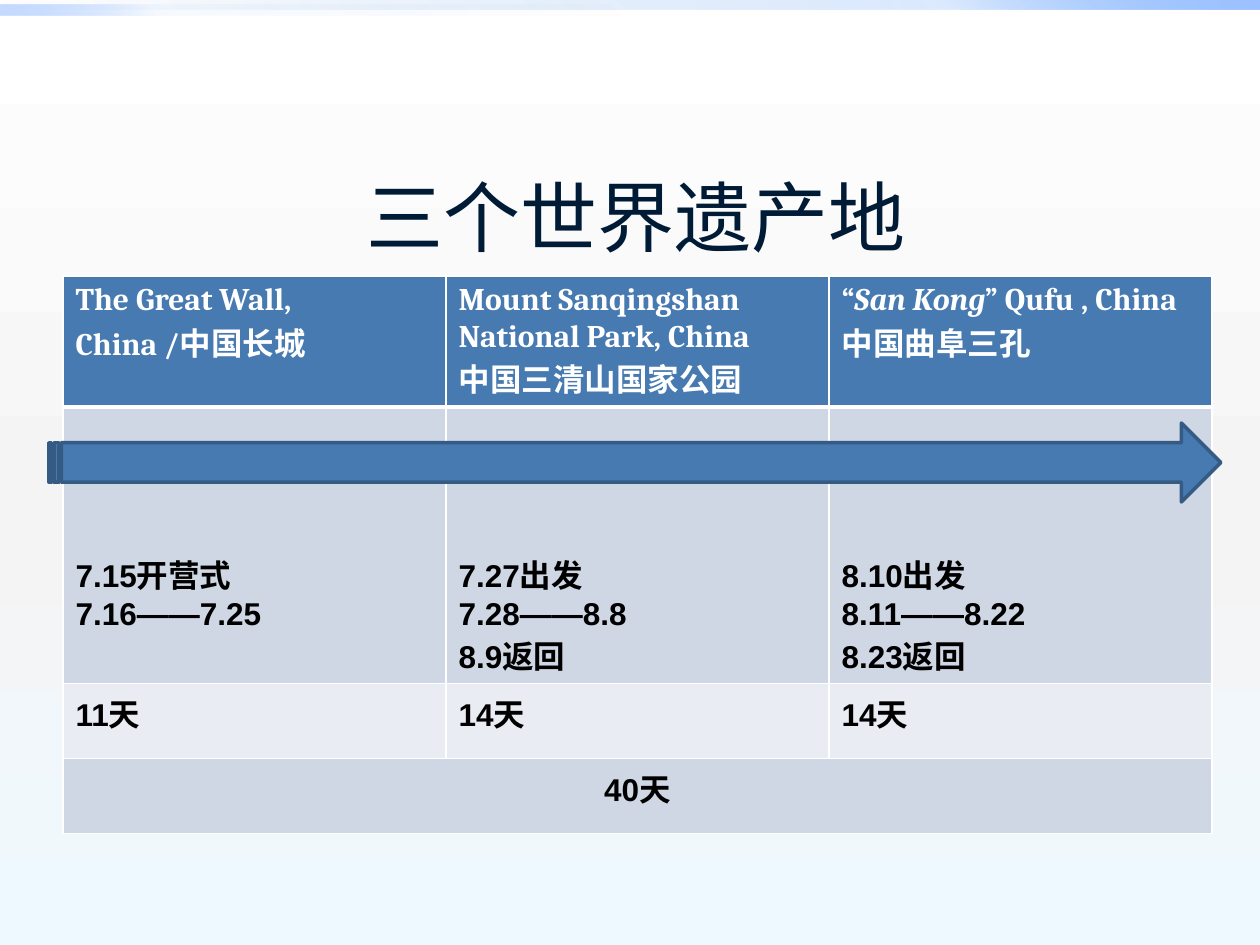
from lxml import etree
from pptx import Presentation
from pptx.dml.color import RGBColor
from pptx.enum.shapes import MSO_SHAPE
from pptx.enum.text import MSO_ANCHOR, PP_ALIGN
from pptx.oxml import parse_xml
from pptx.oxml.ns import nsdecls, qn
from pptx.util import Emu, Pt

RECT, ARROW = MSO_SHAPE.RECTANGLE, MSO_SHAPE.STRIPED_RIGHT_ARROW
CENTER, MIDDLE = PP_ALIGN.CENTER, MSO_ANCHOR.MIDDLE
PX = 914400 // 126

COLORS = {
    "blue": "477AB1", "outline": "355A83", "navy": "001B36",
    "white": "FFFFFF", "black": "000000",
    "odd_row": "CFD7E4", "even_row": "E9ECF2",
    "mist": "F4F4F4", "ice": "EEF9FF",
    "deep": "0058B7", "bright": "4F95FF", "sky": "9EC2FF",
}

# Each cell is a list of paragraphs, each paragraph a list of (text, italic).
HEADERS = [
    [[("The Great Wall,\vChina /中国长城", False)]],
    [[("Mount Sanqingshan National Park, China", False)],
     [("中国三清山国家公园", False)]],
    [[("“", False), ("San Kong", True), ("” Qufu , China", False)],
     [("中国曲阜三孔", False)]],
]
DATES = [
    ["7.15开营式", "7.16——7.25"],
    ["7.27出发", "7.28——8.8", "8.9返回"],
    ["8.10出发", "8.11——8.22", "8.23返回"],
]
DAYS = ["11天", "14天", "14天"]
TOTAL = "40天"
COL_WIDTH, ROW_HEIGHTS = 383, [131, 276, 75, 75]
ARROW_SPACE = 144


def px(n):
    return Emu(n * PX)


def rgb(name):
    return RGBColor.from_string(COLORS[name])


def set_gradient(fill, parent, stops, angle):
    """Fill with (position %, colour, opacity %) stops at a clockwise angle."""
    fill.solid()
    fill.fore_color.rgb = rgb("white")
    gs = "".join(
        f'<a:gs pos="{pos * 1000}"><a:srgbClr val="{COLORS[color]}">'
        f'<a:alpha val="{alpha * 1000}"/></a:srgbClr></a:gs>'
        for pos, color, alpha in stops)
    solid = next(parent.iter(qn("a:solidFill")))
    solid.getparent().replace(solid, parse_xml(
        f'<a:gradFill {nsdecls("a")} rotWithShape="1"><a:gsLst>{gs}</a:gsLst>'
        f'<a:lin ang="{angle * 60000}" scaled="0"/></a:gradFill>'))


def add_plain_shape(slide, kind, x, y, w, h):
    sp = slide.shapes.add_shape(kind, px(x), px(y), px(w), px(h))
    sp.shadow.inherit = False
    return sp


def add_band(slide, x, y, w, h, stops, angle):
    sp = add_plain_shape(slide, RECT, x, y, w, h)
    sp.line.fill.background()
    set_gradient(sp.fill, sp._element.spPr, stops, angle)


def add_run(p, text, size, font, color, bold=False, italic=False):
    for i, part in enumerate(text.split("\v")):
        if i:
            p.add_line_break()
        r = p.add_run()
        r.text = part
        r.font.size, r.font.name = Pt(size), font
        r.font.bold, r.font.italic = bold, italic
        r.font.color.rgb = rgb(color)


def add_title(slide, text):
    tf = slide.shapes.add_textbox(px(69), px(137), px(1134), px(158)).text_frame
    tf.word_wrap, tf.vertical_anchor = True, MIDDLE
    p = tf.paragraphs[0]
    p.alignment = CENTER
    add_run(p, text, 44, "Arial", "navy")


def set_borders(cell, bottom):
    tc_pr = cell._tc.get_or_add_tcPr()
    widths = {"lnL": 1, "lnR": 1, "lnT": 1, "lnB": bottom}
    for i, (tag, width) in enumerate(widths.items()):
        ln = etree.Element(qn(f"a:{tag}"), w=str(Pt(width)))
        solid = etree.SubElement(ln, qn("a:solidFill"))
        etree.SubElement(solid, qn("a:srgbClr"), val=COLORS["white"])
        tc_pr.insert(i, ln)


def fill_cell(cell, paragraphs, fill, font="Arial", color="black",
              bottom=1, align=None):
    cell.fill.solid()
    cell.fill.fore_color.rgb = rgb(fill)
    set_borders(cell, bottom)
    tf = cell.text_frame
    for i, runs in enumerate(paragraphs):
        p = tf.add_paragraph() if i else tf.paragraphs[0]
        p.alignment = align
        for text, italic in runs:
            add_run(p, text, 18, font, color, True, italic)


def plain(*lines):
    return [[(line, False)] for line in lines]


def add_schedule(slide):
    rows, cols = len(ROW_HEIGHTS), len(HEADERS)
    table = slide.shapes.add_table(
        rows, cols, px(63), px(276), px(COL_WIDTH * cols),
        px(sum(ROW_HEIGHTS))).table
    for row, height in zip(table.rows, ROW_HEIGHTS):
        row.height = px(height)
    for c in range(cols):
        table.columns[c].width = px(COL_WIDTH)
        fill_cell(table.cell(0, c), HEADERS[c], "blue", "Cambria", "white", 3)
        fill_cell(table.cell(1, c), plain(*DATES[c]), "odd_row")
        table.cell(1, c).margin_top = px(ARROW_SPACE)
        fill_cell(table.cell(2, c), plain(DAYS[c]), "even_row")
    total = table.cell(3, 0)
    total.merge(table.cell(3, cols - 1))
    fill_cell(total, plain(TOTAL), "odd_row", align=CENTER)


def add_timeline_arrow(slide):
    sp = add_plain_shape(slide, ARROW, 49, 423, 1172, 79)
    sp.fill.solid()
    sp.fill.fore_color.rgb = rgb("blue")
    sp.line.color.rgb = rgb("outline")
    sp.line.width = Pt(2)


def main():
    prs = Presentation()
    prs.slide_width, prs.slide_height = px(1260), px(945)
    s = prs.slides.add_slide(prs.slide_layouts[6])
    set_gradient(s.background.fill, s._element,
                 [(0, "white", 100), (55, "mist", 100), (100, "ice", 100)], 90)
    add_band(s, 0, 0, 1260, 10,
             [(0, "deep", 0), (75, "bright", 20), (100, "sky", 100)], 315)
    add_band(s, 0, 5, 630, 10,
             [(0, "deep", 0), (75, "bright", 5), (100, "sky", 60)], 135)
    add_schedule(s)
    add_title(s, "三个世界遗产地")
    add_timeline_arrow(s)
    prs.save("out.pptx")


if __name__ == "__main__":
    main()
